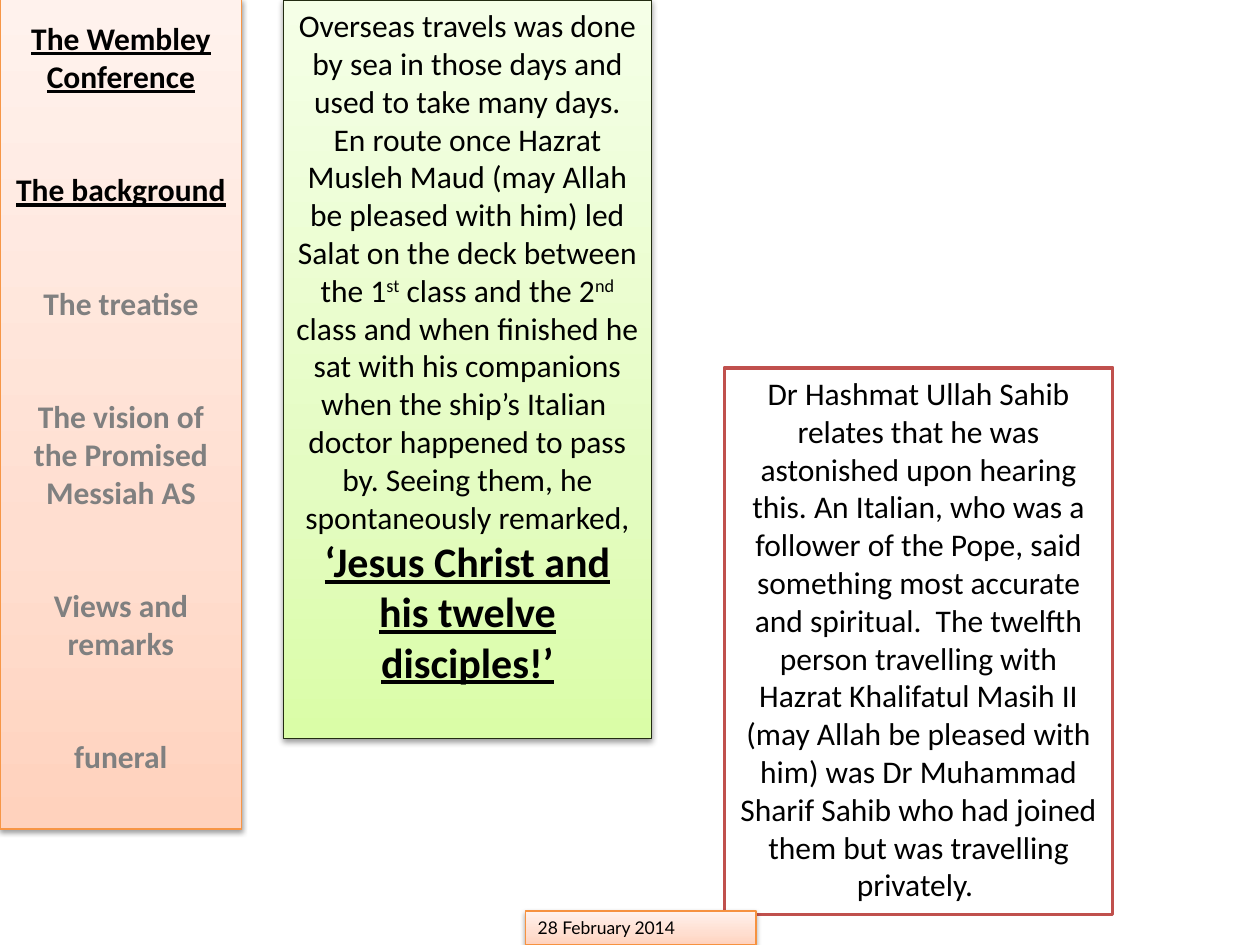
from copy import deepcopy

from lxml.etree import SubElement
from pptx import Presentation
from pptx.dml.color import RGBColor
from pptx.enum.shapes import MSO_SHAPE as Shape
from pptx.enum.text import MSO_ANCHOR as Anchor, PP_ALIGN as Align
from pptx.oxml.ns import qn
from pptx.util import Pt

BLACK, GREY = "000000", "808080"
ORANGE = ("FFD2BD", "FFDED0", "FFF2ED")
GREEN = ("DAFDA7", "E4FCC2", "F5FFE7")
STOPS = (0, 0.35, 1)
TOPICS = (
    ("The Wembley Conference", True),
    ("The background", True),
    ("The treatise", False),
    ("The vision of the Promised Messiah AS", False),
    ("Views and remarks", False),
    ("funeral", False),
)
VOYAGE = (
    ("Overseas travels was done by sea in those days and used to take many days. "
     "En route once Hazrat Musleh Maud (may Allah be pleased with him) led Salat "
     "on the deck between the 1", {}),
    ("st", {"raised": True}),
    (" class and the 2", {}),
    ("nd", {"raised": True}),
    (" class and when finished he sat with his companions when the ship’s Italian  "
     "doctor happened to pass by. Seeing them, he spontaneously remarked, ", {}),
    ("‘Jesus Christ and his twelve disciples!’",
     {"size": 24, "bold": True, "underline": True}),
)
COMMENT = (
    "Dr Hashmat Ullah Sahib relates that he was astonished upon hearing this. "
    "An Italian, who was a follower of the Pope, said something most accurate and "
    "spiritual.  The twelfth person travelling with Hazrat Khalifatul Masih II "
    "(may Allah be pleased with him) was Dr Muhammad Sharif Sahib who had joined "
    "them but was travelling privately. "
)


def color(value):
    return RGBColor.from_string(value)


def add_text(paragraph, text, size=18, font="Calibri", fill=BLACK,
             bold=False, underline=False, raised=False):
    run = paragraph.add_run()
    run.text = text
    run.font.size = Pt(size)
    run.font.name = font
    run.font.bold = bold
    run.font.underline = underline
    run.font.color.rgb = color(fill)
    if raised:
        run._r.get_or_add_rPr().set("baseline", "30000")


class SlideBuilder:
    """Draws filled panels and their paragraphs on one slide."""

    def __init__(self, slide):
        self.slide = slide

    def panel(self, left, top, width, height, fill, line, weight=0.75, inset=3.6):
        shape = self.slide.shapes.add_shape(
            Shape.RECTANGLE, Pt(left), Pt(top), Pt(width), Pt(height))
        shape.shadow.inherit = False
        shape.line.color.rgb = color(line)
        shape.line.width = Pt(weight)
        frame = shape.text_frame
        frame.word_wrap = True
        frame.vertical_anchor = Anchor.TOP
        frame.margin_top = Pt(inset)
        if isinstance(fill, str):
            shape.fill.solid()
            shape.fill.fore_color.rgb = color(fill)
        else:
            self.gradient(shape, fill)
            self.shadow(shape)
        return frame

    def gradient(self, shape, colors):
        shape.fill.gradient()
        shape.fill.gradient_angle = 90
        stop_list = shape._element.spPr.find(".//" + qn("a:gsLst"))
        stop_list.append(deepcopy(stop_list[-1]))
        for stop, position, value in zip(shape.fill.gradient_stops, STOPS, colors):
            stop.position = position
            stop.color.rgb = color(value)

    def shadow(self, shape):
        effects = shape._element.spPr.find(qn("a:effectLst"))
        outer = SubElement(effects, qn("a:outerShdw"), blurRad=str(Pt(3.1)),
                           dist=str(Pt(1.6)), dir="5400000", rotWithShape="0")
        shade = SubElement(outer, qn("a:srgbClr"), val=BLACK)
        SubElement(shade, qn("a:alpha"), val="38000")

    def paragraph(self, frame, runs, align=Align.CENTER, first=True, gap=0):
        paragraph = frame.paragraphs[0] if first else frame.add_paragraph()
        paragraph.alignment = align
        paragraph.space_before = Pt(0 if first else gap)
        for text, style in runs:
            add_text(paragraph, text, **style)


def main():
    presentation = Presentation()
    presentation.slide_width, presentation.slide_height = Pt(720), Pt(540)
    builder = SlideBuilder(presentation.slides.add_slide(presentation.slide_layouts[6]))

    sidebar = builder.panel(0, -0.7, 138.2, 474.5, ORANGE, "F79646", inset=11.6)
    for index, (topic, current) in enumerate(TOPICS):
        style = {"bold": True, "underline": current, "fill": BLACK if current else GREY}
        builder.paragraph(sidebar, [(topic, style)], first=index == 0, gap=43.2)

    voyage = builder.panel(162, 0, 210.2, 421.9, GREEN, "232C12")
    builder.paragraph(voyage, VOYAGE)

    comment = builder.panel(414, 210.2, 221.8, 312.5, "FFFFFF", "C0504D", weight=2)
    builder.paragraph(comment, [(COMMENT, {})])

    date = builder.panel(300.2, 520.6, 131.8, 19.4, ORANGE, "F69240")
    builder.paragraph(date, [("28 February 2014", {"size": 10, "font": "Lato"})], Align.LEFT)

    presentation.save("out.pptx")


if __name__ == "__main__":
    main()
